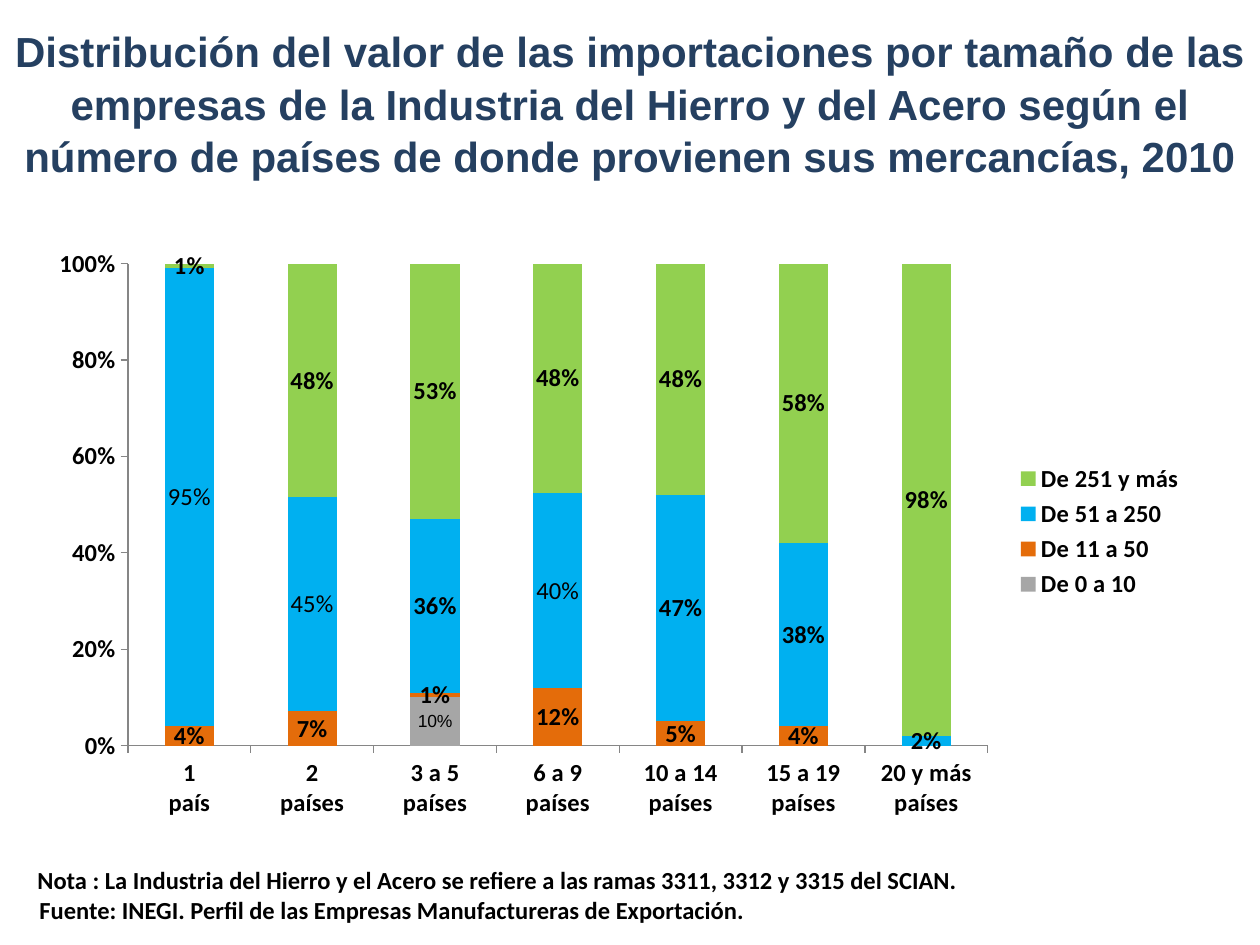
from lxml import etree
from pptx import Presentation
from pptx.chart.data import CategoryChartData
from pptx.dml.color import RGBColor
from pptx.enum.chart import XL_CHART_TYPE as ChartType
from pptx.enum.chart import XL_LEGEND_POSITION as LegendPosition
from pptx.enum.chart import XL_TICK_MARK as TickMark
from pptx.enum.text import MSO_ANCHOR as Anchor
from pptx.enum.text import PP_ALIGN as Align
from pptx.oxml import parse_xml
from pptx.oxml.ns import nsdecls, qn
from pptx.util import Emu, Pt

rgb = RGBColor.from_string


def px(length):
    return Emu(length * 914400 // 126)


def write(frame, text, size=14, font="Calibri", color="000000", bold=True,
          align=Align.LEFT, spacing=None):
    paragraph = frame.paragraphs[0]
    paragraph.alignment = align
    paragraph.line_spacing = spacing
    run = paragraph.add_run()
    run.text = text
    run.font.size = Pt(size)
    run.font.name = font
    run.font.bold = bold
    run.font.color.rgb = rgb(color)


presentation = Presentation()
presentation.slide_width, presentation.slide_height = px(1260), px(945)
slide = presentation.slides.add_slide(presentation.slide_layouts[5])

# Title
title = slide.shapes.title
title.left, title.top, title.width, title.height = px(0), px(13), px(1260), px(178)
title.text_frame.word_wrap = True
title.text_frame.vertical_anchor = Anchor.MIDDLE
write(title.text_frame,
      "Distribución del valor de las importaciones por tamaño de las empresas de la "
      "Industria del Hierro y del Acero según el número de países de donde provienen "
      "sus mercancías, 2010",
      size=24, font="Arial", color="254061", align=Align.CENTER, spacing=1.05)

# Chart data: name, colour, values, labels written by hand
company_sizes = [
    ("De 0 a 10", "A6A6A6", [0, 0, 0.10, 0, 0, 0, 0], {}),
    ("De 11 a 50", "E46C0A", [0.04, 0.07, 0.01, 0.12, 0.05, 0.04, 0], {}),
    ("De 51 a 250", "00B0F0", [0.96, 0.44, 0.36, 0.41, 0.47, 0.38, 0.02],
     {0: "95%", 1: "45%", 3: "40%"}),
    ("De 251 y más", "92D050", [0.01, 0.48, 0.53, 0.48, 0.48, 0.58, 0.98], {}),
]
data = CategoryChartData(number_format="0%")
data.categories = ["1\npaís", "2\npaíses", "3 a 5\npaíses", "6 a 9\npaíses",
                   "10 a 14\npaíses", "15 a 19\npaíses", "20 y más\npaíses"]
for name, _, values, _ in company_sizes:
    data.add_series(name, values)

# Chart
chart = slide.shapes.add_chart(ChartType.COLUMN_STACKED_100, px(35), px(234),
                               px(1162), px(595), data).chart
chart.has_title = False
chart.font.size = Pt(14)
chart.font.name = "Calibri"
chart.font.bold = True
chart.font.color.rgb = rgb("000000")
chart.has_legend = True
chart.legend.position = LegendPosition.RIGHT
chart.legend.include_in_layout = False

# Fixed plot area, as fractions of the chart
plot_area = chart._chartSpace.chart.plotArea
for old_layout in plot_area.findall(qn("c:layout")):
    plot_area.remove(old_layout)
layout = parse_xml(f'<c:layout {nsdecls("c")}><c:manualLayout/></c:layout>')
for tag, value in [("layoutTarget", "inner"), ("xMode", "edge"), ("yMode", "edge"),
                   ("x", "0.08"), ("y", "0.05"), ("w", "0.74"), ("h", "0.81")]:
    etree.SubElement(layout[0], qn(f"c:{tag}")).set("val", value)
plot_area.insert(0, layout)

# Axes
for axis in (chart.category_axis, chart.value_axis):
    axis.has_major_gridlines = False
    axis.major_tick_mark = TickMark.OUTSIDE
    axis.minor_tick_mark = TickMark.NONE
    axis.format.line.color.rgb = rgb("868686")
    axis.format.line.width = Pt(0.75)
chart.value_axis.minimum_scale = 0
chart.value_axis.maximum_scale = 1
chart.value_axis.major_unit = 0.2
chart.value_axis.tick_labels.number_format = "0%"
chart.value_axis.tick_labels.number_format_is_linked = False

# Columns and their labels; the number format hides zeros
plot = chart.plots[0]
plot.gap_width = 150
plot.overlap = 100
for series, (name, color, _, custom_labels) in zip(plot.series, company_sizes):
    series.format.fill.solid()
    series.format.fill.fore_color.rgb = rgb(color)
    labels = series.data_labels
    labels.show_value = True
    labels.number_format = "0%;;"
    labels.number_format_is_linked = False
    smallest = name == "De 0 a 10"
    labels.font.size = Pt(10 if smallest else 14)
    labels.font.name = "Arial" if smallest else "Calibri"
    labels.font.bold = not smallest
    labels.font.color.rgb = rgb("000000")
    for index, text in custom_labels.items():
        write(series.points[index].data_label.text_frame, text, bold=False,
              align=Align.CENTER)

# Note and source
for left, top, text in [
    (25, 859, "Nota : La Industria del Hierro y el Acero se refiere a las ramas "
              "3311, 3312 y 3315 del SCIAN."),
    (27, 889, "Fuente: INEGI. Perfil de las Empresas Manufactureras de Exportación."),
]:
    box = slide.shapes.add_textbox(px(left), px(top), px(1208), px(43))
    box.text_frame.word_wrap = True
    write(box.text_frame, text)

presentation.save("out.pptx")
